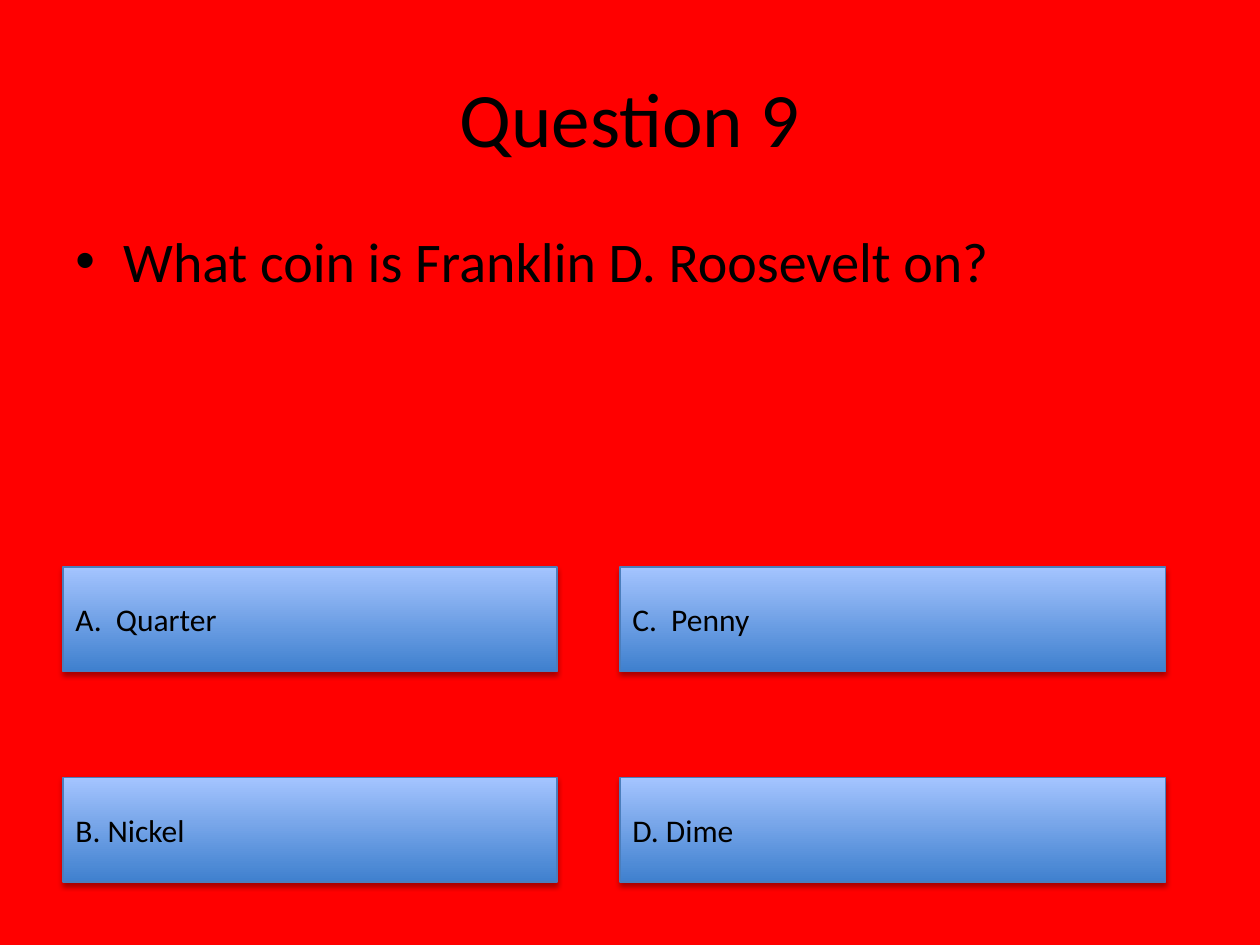
"""Build a quiz slide with one question and four answer buttons."""
from dataclasses import dataclass

from lxml import etree
from pptx import Presentation
from pptx import util as u
from pptx.dml.color import RGBColor as Rgb
from pptx.enum import shapes, text
from pptx.oxml import ns


@dataclass(frozen=True)
class Theme:
    font: str = "Calibri"
    back: str = "FF0000"
    ink: str = "000000"
    low: str = "3F80CE"
    high: str = "A4C4FF"
    edge: str = "4B7EBC"
    head: int = 44
    body: int = 32
    label: int = 18


class Quiz:
    def __init__(self, deck, theme):
        self.theme = theme
        self.slide = deck.slides.add_slide(deck.slide_layouts[6])
        fill = self.slide.background.fill
        fill.solid()
        fill.fore_color.rgb = Rgb.from_string(theme.back)

    def letter(self, shape, words, size, align, anchor):
        frame = shape.text_frame
        frame.text = words
        frame.word_wrap = True
        frame.vertical_anchor = anchor
        para = frame.paragraphs[0]
        para.alignment = align
        font = para.runs[0].font
        font.name, font.size = self.theme.font, u.Pt(size)
        font.color.rgb = Rgb.from_string(self.theme.ink)
        return para

    def box(self, area, words, size, align, anchor):
        shape = self.slide.shapes.add_textbox(*map(u.Inches, area))
        return self.letter(shape, words, size, align, anchor)

    def title(self, area, words):
        self.box(area, words, self.theme.head,
                 text.PP_ALIGN.CENTER, text.MSO_ANCHOR.MIDDLE)

    def bullet(self, area, words):
        para = self.box(area, words, self.theme.body,
                        text.PP_ALIGN.LEFT, text.MSO_ANCHOR.TOP)
        para.space_before = u.Pt(self.theme.body * 0.2)
        props = para._p.get_or_add_pPr()
        indent = u.Inches(0.38)
        props.set("marL", str(indent))
        props.set("indent", str(-indent))
        etree.SubElement(props, ns.qn("a:buFont")).set("typeface", "Arial")
        etree.SubElement(props, ns.qn("a:buChar")).set("char", "•")

    def button(self, area, words):
        shape = self.slide.shapes.add_shape(
            shapes.MSO_SHAPE.ACTION_BUTTON_CUSTOM, *map(u.Inches, area))
        shape.fill.gradient()
        shape.fill.gradient_angle = 90
        tones = (self.theme.low, self.theme.high)
        for place, (stop, tone) in enumerate(zip(shape.fill.gradient_stops, tones)):
            stop.position = place
            stop.color.rgb = Rgb.from_string(tone)
        shape.line.color.rgb = Rgb.from_string(self.theme.edge)
        shape.line.width = u.Pt(0.75)
        self.shade(shape)
        self.letter(shape, words, self.theme.label,
                    text.PP_ALIGN.LEFT, text.MSO_ANCHOR.MIDDLE)

    def shade(self, shape):
        shape.shadow.inherit = False
        group = shape._element.spPr.find(ns.qn("a:effectLst"))
        cast = etree.SubElement(
            group, ns.qn("a:outerShdw"), blurRad=str(u.Pt(3.1)),
            dist=str(u.Pt(1.8)), dir="5400000", rotWithShape="0")
        tone = etree.SubElement(cast, ns.qn("a:srgbClr"), val=self.theme.ink)
        etree.SubElement(tone, ns.qn("a:alpha"), val="35000")


def main():
    deck = Presentation()
    deck.slide_width, deck.slide_height = u.Inches(10), u.Inches(7.5)
    quiz = Quiz(deck, Theme())
    cols = ((0.5, 3.92), (4.92, 4.33))
    rows = (4.5, 6.17)
    answers = (("A.  Quarter", "B. Nickel"), ("C.  Penny", "D. Dime"))
    for (left, width), names in zip(cols, answers):
        for top, name in zip(rows, names):
            quiz.button((left, top, width, 0.83), name)
    quiz.title((0.5, 0.3, 9, 1.25), "Question 9")
    quiz.bullet((0.5, 1.75, 9, 1.75), "What coin is Franklin D. Roosevelt on?")
    deck.save("out.pptx")


if __name__ == "__main__":
    main()
